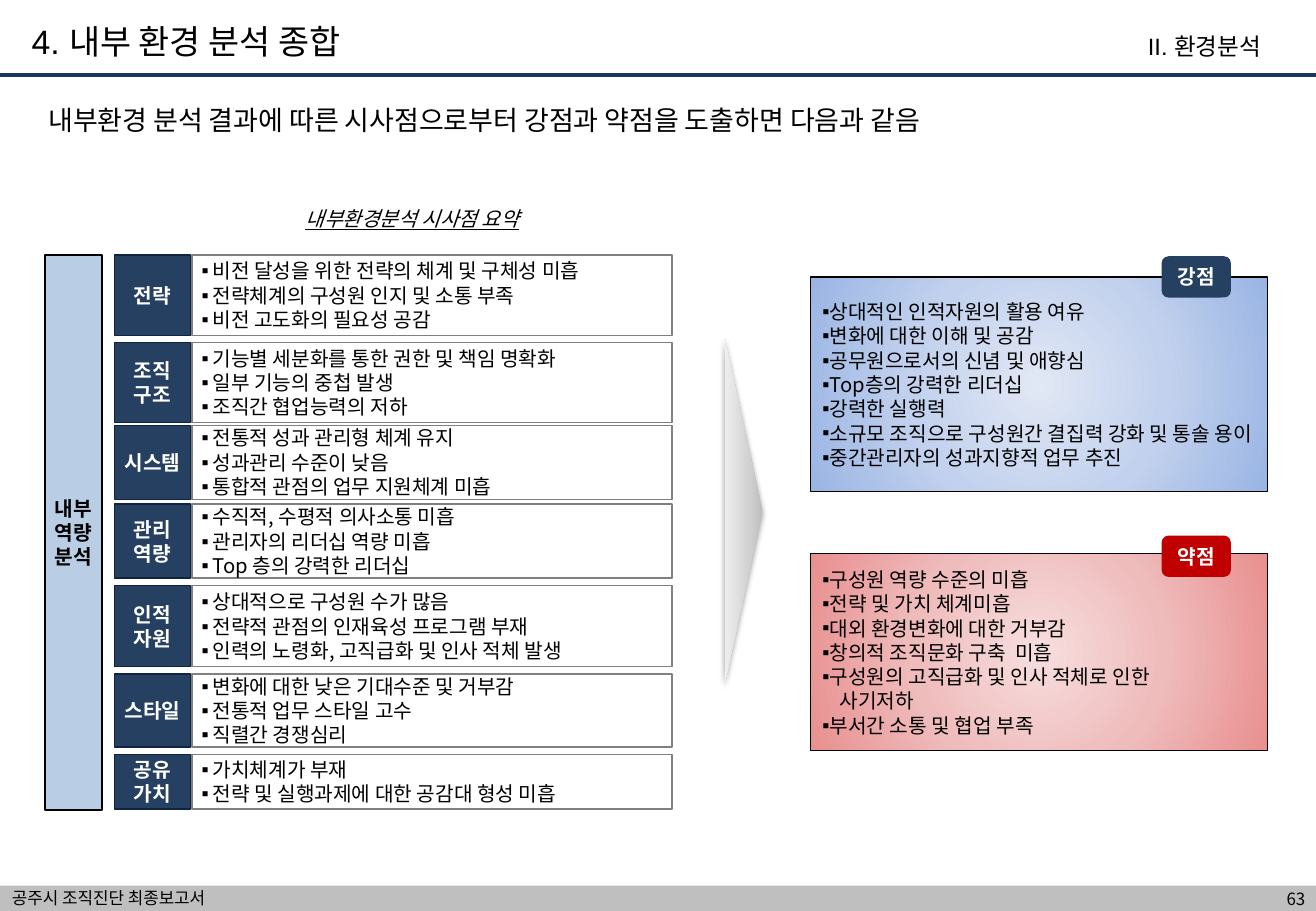
"""Builds a slide that draws strengths and weaknesses from an internal analysis."""
from dataclasses import dataclass
from typing import NamedTuple, Optional

from lxml import etree
from pptx import Presentation
from pptx.dml.color import RGBColor
from pptx.enum.shapes import MSO_CONNECTOR, MSO_SHAPE
from pptx.enum.text import MSO_ANCHOR, PP_ALIGN
from pptx.oxml import parse_xml
from pptx.oxml.ns import nsdecls, qn
from pptx.util import Inches, Pt

RECT, ROUNDED, TRIANGLE = MSO_SHAPE.RECTANGLE, MSO_SHAPE.ROUNDED_RECTANGLE, MSO_SHAPE.ISOSCELES_TRIANGLE
STRAIGHT = MSO_CONNECTOR.STRAIGHT
LEFT, CENTER, RIGHT = PP_ALIGN.LEFT, PP_ALIGN.CENTER, PP_ALIGN.RIGHT
TOP, MIDDLE = MSO_ANCHOR.TOP, MSO_ANCHOR.MIDDLE


@dataclass(frozen=True)
class Theme:
    heading_font: str = "Arial"
    body_font: str = "Noto Sans CJK KR"
    black: str = "000000"
    white: str = "FFFFFF"
    rule: str = "17375E"
    footer: str = "BFBFBF"
    navy: str = "254061"
    navy_edge: str = "0F243E"
    pale_blue: str = "B9CDE5"
    grey_edge: str = "808080"
    red: str = "C00000"
    title: float = 20
    section: float = 14
    lead: float = 16
    body: float = 12
    small: float = 10
    body_pitch: float = 14.4


THEME = Theme()


class Area(NamedTuple):
    left: float
    top: float
    width: float
    height: float


class Style(NamedTuple):
    size: float = THEME.body
    color: str = THEME.black
    font: str = THEME.body_font
    align: PP_ALIGN = LEFT
    bold: bool = False
    accent: bool = False
    spacing: Optional[float] = None
    bullet: bool = False
    hanging: float = 0
    side: float = 0.1
    anchor: MSO_ANCHOR = MIDDLE
    wrap: bool = True


class Factor(NamedTuple):
    label: str
    top: float
    height: float
    points: list[str]


class Panel(NamedTuple):
    label: str
    area: Area
    tag_top: float
    tag_color: str
    gradient: list[tuple[int, str]]
    points: list[str]


FACTORS = [
    Factor("전략", 2.1, 0.66, ["비전 달성을 위한 전략의 체계 및 구체성 미흡", "전략체계의 구성원 인지 및 소통 부족", "비전 고도화의 필요성 공감"]),
    Factor("조직 구조", 2.82, 0.66, ["기능별 세분화를 통한 권한 및 책임 명확화", "일부 기능의 중첩 발생", "조직간 협업능력의 저하"]),
    Factor("시스템", 3.5, 0.61, ["전통적 성과 관리형 체계 유지", "성과관리 수준이 낮음", "통합적 관점의 업무 지원체계 미흡"]),
    Factor("관리 역량", 4.15, 0.61, ["수직적, 수평적 의사소통 미흡", "관리자의 리더십 역량 미흡", "Top 층의 강력한 리더십"]),
    Factor("인적 자원", 4.82, 0.67, ["상대적으로 구성원 수가 많음", "전략적 관점의 인재육성 프로그램 부재", "인력의 노령화, 고직급화 및 인사 적체 발생"]),
    Factor("스타일", 5.55, 0.6, ["변화에 대한 낮은 기대수준 및 거부감", "전통적 업무 스타일 고수", "직렬간 경쟁심리"]),
    Factor("공유 가치", 6.21, 0.45, ["가치체계가 부재", "전략 및 실행과제에 대한 공감대 형성 미흡"]),
]
CONTINUATION = "사기저하"
PANELS = [
    Panel("강점", Area(6.67, 2.28, 3.76, 1.77), 2.11, THEME.navy, [(0, "E1E8F5"), (50, "C2D1ED"), (100, "9AB5E4")],
          ["상대적인 인적자원의 활용 여유", "변화에 대한 이해 및 공감", "공무원으로서의 신념 및 애향심", "Top층의 강력한 리더십",
           "강력한 실행력", "소규모 조직으로 구성원간 결집력 강화 및 통솔 용이", "중간관리자의 성과지향적 업무 추진"]),
    Panel("약점", Area(6.67, 4.56, 3.76, 1.62), 4.41, THEME.red, [(0, "F7DEDE"), (50, "EFBCBC"), (100, "E98F8F")],
          ["구성원 역량 수준의 미흡", "전략 및 가치 체계미흡", "대외 환경변화에 대한 거부감", "창의적 조직문화 구축  미흡",
           "구성원의 고직급화 및 인사 적체로 인한", CONTINUATION, "부서간 소통 및 협업 부족"]),
]
ARROW_GRADIENT = [(0, "BDBDBD"), (35, "D1D1D1"), (100, "EEEEEE")]
RADIAL = '<a:path path="circle"><a:fillToRect l="50000" t="50000" r="50000" b="50000"/></a:path>'
DOWNWARD = '<a:lin ang="5400000" scaled="0"/>'
BODY = Style(spacing=THEME.body_pitch)
LABEL = BODY._replace(align=CENTER, bold=True, side=0.04)
TAG = LABEL._replace(color=THEME.white, side=0.1, wrap=False)
POINTS = BODY._replace(bullet=True)
HEADING = Style(font=THEME.heading_font, anchor=TOP)


def frame(area: Area) -> list[int]:
    return [Inches(length) for length in area]


def write(box, lines: list[str], style: Style) -> None:
    text = box.text_frame
    text.word_wrap = style.wrap
    text.vertical_anchor = style.anchor
    text.margin_left = text.margin_right = Inches(style.side)
    text.margin_top = text.margin_bottom = Inches(0.05)
    for index, line in enumerate(lines):
        para = text.paragraphs[0] if index == 0 else text.add_paragraph()
        para.alignment = style.align
        if style.spacing:
            para.line_spacing = Pt(style.spacing) if style.spacing > 2 else style.spacing
        properties = para._p.get_or_add_pPr()
        continued = line == CONTINUATION
        properties.set("marL", str(Inches(0.14 if continued else style.hanging)))
        properties.set("indent", str(0 if continued else -Inches(style.hanging)))
        if style.bullet and not continued:
            etree.SubElement(properties, qn("a:buFont")).set("typeface", THEME.heading_font)
            etree.SubElement(properties, qn("a:buChar")).set("char", "▪")
        span = para.add_run()
        span.text = line
        font = span.font
        font.size, font.name, font.bold = Pt(style.size), style.font, style.bold
        font.italic = font.underline = style.accent
        font.color.rgb = RGBColor.from_string(style.color)
        etree.SubElement(span._r.get_or_add_rPr(), qn("a:ea")).set("typeface", THEME.body_font)


def add_box(page, area: Area, fill: Optional[str] = None, edge: Optional[str] = None, kind: MSO_SHAPE = RECT):
    box = page.shapes.add_shape(kind, *frame(area))
    box.shadow.inherit = False
    if fill:
        box.fill.solid()
        box.fill.fore_color.rgb = RGBColor.from_string(fill)
    else:
        box.fill.background()
    if edge:
        box.line.color.rgb = RGBColor.from_string(edge)
        box.line.width = Pt(0.75)
    else:
        box.line.fill.background()
    return box


def shade(box, stops: list[tuple[int, str]], direction: str) -> None:
    box.fill.gradient()
    colors = "".join(f'<a:gs pos="{at * 1000}"><a:srgbClr val="{color}"/></a:gs>' for at, color in stops)
    gradient = parse_xml(f'<a:gradFill {nsdecls("a")} rotWithShape="1"><a:gsLst>{colors}</a:gsLst>{direction}</a:gradFill>')
    properties = box._element.spPr
    properties.replace(properties.find(qn("a:gradFill")), gradient)


def add_text(page, area: Area, line: str, style: Style) -> None:
    write(page.shapes.add_textbox(*frame(area)), [line], style)


def add_chrome(page) -> None:
    add_box(page, Area(0, 7.29, 10.83, 0.21), THEME.footer)
    rule = page.shapes.add_connector(STRAIGHT, 0, Inches(0.62), Inches(10.83), Inches(0.62))
    rule.line.color.rgb = RGBColor.from_string(THEME.rule)
    rule.line.width = Pt(2.5)
    etree.SubElement(rule._element.spPr, qn("a:effectLst"))
    add_text(page, Area(9.54, 7.29, 1.3, 0.21), "63", Style(THEME.small, align=RIGHT))
    add_text(page, Area(0, 7.26, 5.42, 0.27), "공주시 조직진단 최종보고서", Style(THEME.small, anchor=TOP))
    title = page.shapes.title
    title.left, title.top, title.width, title.height = frame(Area(0.16, 0.16, 3.15, 0.4))
    write(title, ["4. 내부 환경 분석 종합"], HEADING._replace(size=THEME.title, spacing=0.9))
    add_text(page, Area(9.28, 0.21, 1.2, 0.34), "II. 환경분석", HEADING._replace(size=THEME.section, align=RIGHT, wrap=False))
    add_text(page, Area(0.3, 0.75, 10.24, 0.39), "내부환경 분석 결과에 따른 시사점으로부터 강점과 약점을 도출하면 다음과 같음",
             HEADING._replace(size=THEME.lead, spacing=1.2))


def add_factor(page, factor: Factor) -> None:
    points = add_box(page, Area(1.58, factor.top, 3.95, factor.height), edge=THEME.grey_edge)
    write(points, factor.points, POINTS._replace(hanging=0.09, side=0.08))
    label = add_box(page, Area(0.94, factor.top, 0.63, factor.height), THEME.navy, THEME.navy_edge)
    write(label, [factor.label], LABEL._replace(color=THEME.white))


def add_panel(page, panel: Panel) -> None:
    box = add_box(page, panel.area, edge=THEME.black)
    shade(box, panel.gradient, RADIAL)
    write(box, panel.points, POINTS)
    write(add_box(page, Area(9.56, panel.tag_top, 0.57, 0.34), panel.tag_color, kind=ROUNDED), [panel.label], TAG)


def add_arrow(page) -> None:
    arrow = add_box(page, Area(4.7, 4.05, 2.84, 0.31), kind=TRIANGLE)
    arrow.rotation = 90
    shade(arrow, ARROW_GRADIENT, DOWNWARD)
    shadow = parse_xml(f'<a:outerShdw {nsdecls("a")} blurRad="{Pt(3.1)}" dist="{Pt(1.6)}" dir="5400000" rotWithShape="0">'
                       f'<a:srgbClr val="{THEME.black}"><a:alpha val="38000"/></a:srgbClr></a:outerShdw>')
    arrow._element.spPr.find(qn("a:effectLst")).append(shadow)


def main() -> None:
    deck = Presentation()
    deck.slide_width, deck.slide_height = Inches(10.83), Inches(7.5)
    page = deck.slides.add_slide(deck.slide_layouts[5])
    add_chrome(page)
    summary = add_box(page, Area(2.31, 1.65, 2.17, 0.3), THEME.white)
    write(summary, ["내부환경분석 시사점 요약"], BODY._replace(align=CENTER, accent=True, wrap=False))
    add_arrow(page)
    for panel in PANELS:
        add_panel(page, panel)
    write(add_box(page, Area(0.37, 2.1, 0.47, 4.57), THEME.pale_blue, THEME.black), ["내부역량분석"], LABEL)
    for factor in FACTORS:
        add_factor(page, factor)
    deck.save("out.pptx")


if __name__ == "__main__":
    main()
